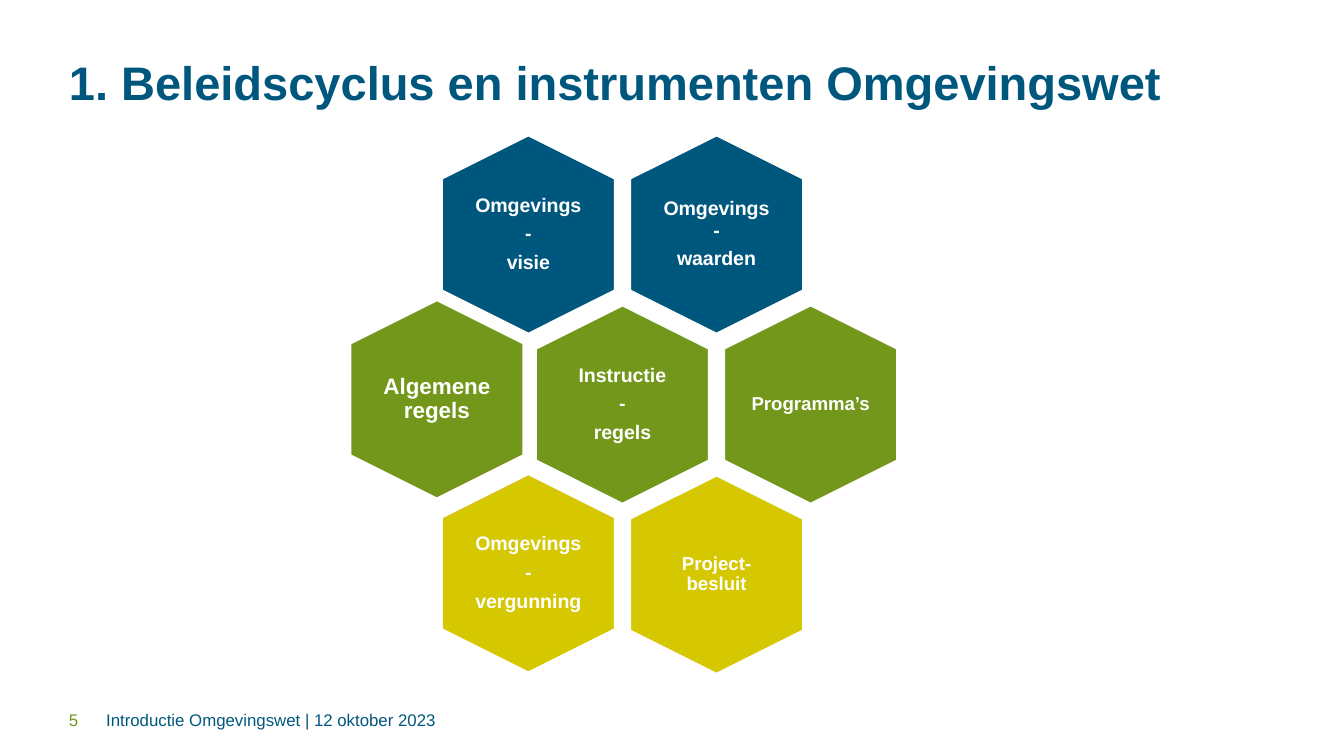
"""Build the slide on policy cycle and instruments of the Omgevingswet."""
from pptx import Presentation
from pptx.dml.color import RGBColor
from pptx.enum.text import MSO_ANCHOR, MSO_AUTO_SIZE, PP_ALIGN
from pptx.util import Pt

MIDDLE = MSO_ANCHOR.MIDDLE
NO_FIT = MSO_AUTO_SIZE.NONE
LEFT, CENTER = PP_ALIGN.LEFT, PP_ALIGN.CENTER

THEME = {
    "font": "Arial",
    "blue": "00577E", "green": "72971B", "yellow": "D5C700", "white": "FFFFFF",
    "title": 25.2, "footer": 9, "large": 12, "normal": 10.5, "small": 10,
}

TITLE = "1. Beleidscyclus en instrumenten Omgevingswet"
FOOTERS = [
    ("5", "green", 36.9, 14.4),
    ("Introductie Omgevingswet | 12 oktober 2023", "blue", 56.9, 340),
]
HEXAGONS = [
    {"row": 0, "col": 1, "lines": ["Omgevings-", "waarden"], "fill": "blue", "inset": (18, 20.2)},
    {"row": 0, "col": 0, "lines": ["Omgevings", "-", "visie"], "fill": "blue"},
    {"row": 1, "col": 0.5, "lines": ["Instructie", "-", "regels"], "fill": "green", "inset": (17.3, 19.4)},
    {"row": 1, "col": 1.5, "lines": ["Programma’s"], "fill": "green", "size": "small"},
    {"row": 2, "col": 1, "lines": ["Project-besluit"], "fill": "yellow", "size": "small",
     "inset": (17.3, 19.4)},
    {"row": 2, "col": 0, "lines": ["Omgevings", "-", "vergunning"], "fill": "yellow", "nudge": (0, -0.7)},
    {"row": 1, "col": -0.5, "lines": ["Algemene regels"], "fill": "green", "size": "large",
     "inset": (17.3, 19.4), "nudge": (1.4, -2.8)},
]

HEX_W, HEX_H, SHOULDER = 93.6, 107.3, 23.4
GRID_X, GRID_Y, STEP_X, STEP_Y = 236.3, 72, 100.8, 91.1


def color(name):
    return RGBColor.from_string(THEME[name])


def write(s, lines, fill="white", size="normal", bold=False, align=LEFT,
          inset=(0, 0), spacing=1.0, after=0):
    tf = s.text_frame
    tf.word_wrap, tf.auto_size, tf.vertical_anchor = True, NO_FIT, MIDDLE
    tf.margin_left = tf.margin_right = Pt(inset[0])
    tf.margin_top = tf.margin_bottom = Pt(inset[1])
    for i, line in enumerate(lines):
        p = tf.add_paragraph() if i else tf.paragraphs[0]
        p.alignment, p.line_spacing = align, spacing
        p.space_before, p.space_after = Pt(0), Pt(after)
        r = p.add_run()
        r.text = line
        r.font.name, r.font.size, r.font.bold = THEME["font"], Pt(THEME[size]), bold
        r.font.color.rgb = color(fill)


def add_hexagon(shapes, row, col, lines, fill, size="normal", inset=(14.4, 16.6), nudge=(0, 0)):
    x = GRID_X + col * STEP_X + nudge[0]
    y = GRID_Y + row * STEP_Y + nudge[1]
    mid, right, low, bottom = x + HEX_W / 2, x + HEX_W, y + HEX_H - SHOULDER, y + HEX_H
    corners = [(right, y + SHOULDER), (right, low), (mid, bottom), (x, low), (x, y + SHOULDER)]
    builder = shapes.build_freeform(Pt(mid), Pt(y))
    builder.add_line_segments([(Pt(a), Pt(b)) for a, b in corners], close=True)
    s = builder.convert_to_shape()
    s.shadow.inherit = False
    s.fill.solid()
    s.fill.fore_color.rgb = color(fill)
    s.line.color.rgb, s.line.width = color("white"), Pt(2)
    write(s, lines, size=size, bold=True, align=CENTER, inset=inset,
          spacing=0.9, after=round(0.39 * THEME[size], 1))


def main():
    prs = Presentation()
    prs.slide_width, prs.slide_height = Pt(720), Pt(405)
    slide = prs.slides.add_slide(prs.slide_layouts[5])
    title = slide.shapes.title
    title.left, title.top, title.width, title.height = Pt(36.9), Pt(27.4), Pt(643.7), Pt(32.4)
    write(title, [TITLE], fill="blue", size="title", bold=True, inset=(0, 3.6))
    for text, fill, left, width in FOOTERS:
        box = slide.shapes.add_textbox(Pt(left), Pt(380.2), Pt(width), Pt(10.8))
        write(box, [text], fill=fill, size="footer")
    for hexagon in HEXAGONS:
        add_hexagon(slide.shapes, **hexagon)
    prs.save("out.pptx")


if __name__ == "__main__":
    main()
